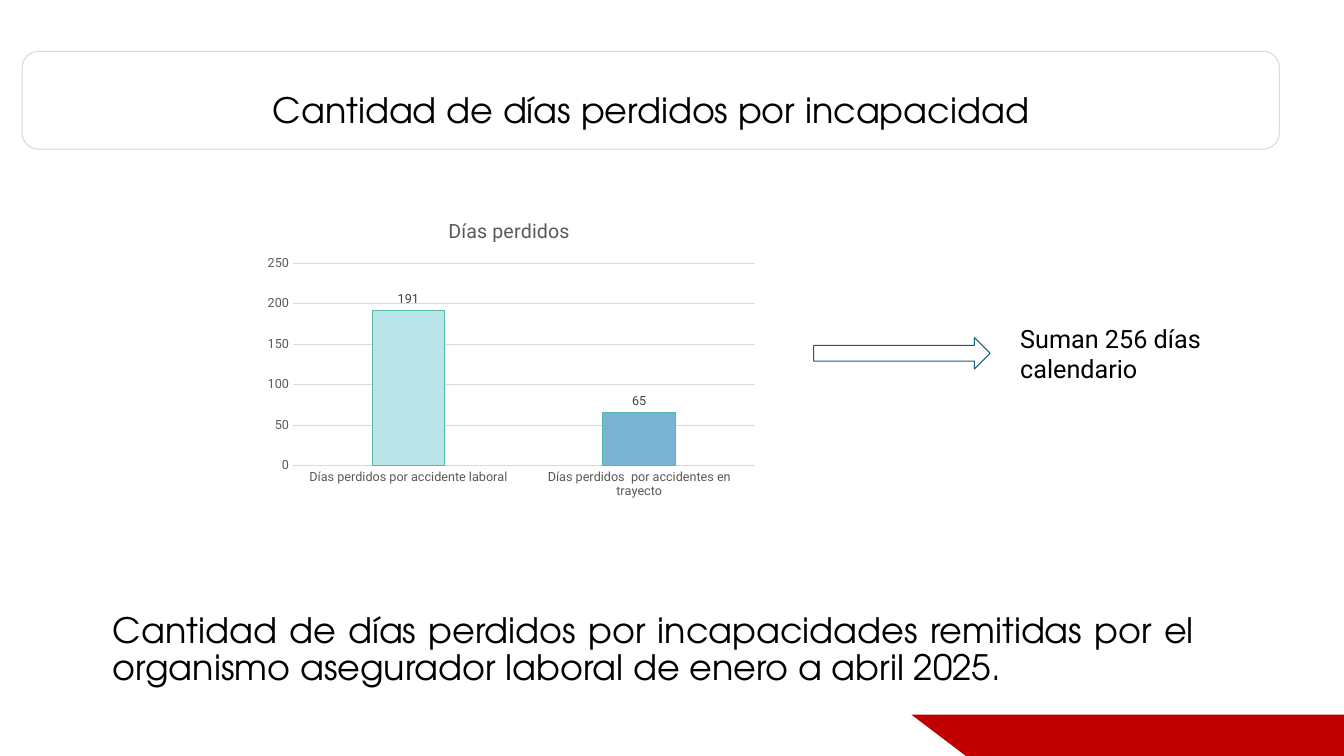
"""Build the slide on days lost to work incapacity."""
from lxml.etree import SubElement
from pptx import Presentation
from pptx.chart.data import CategoryChartData
from pptx.dml.color import RGBColor
from pptx.enum.chart import XL_CHART_TYPE as CT, XL_LABEL_POSITION as LP, XL_TICK_MARK as TM
from pptx.enum.shapes import MSO_SHAPE as SHAPE
from pptx.enum.text import MSO_ANCHOR as ANCHOR, PP_ALIGN as ALIGN
from pptx.oxml.ns import qn
from pptx.util import Inches, Pt

TITLE = "Cantidad de días perdidos por incapacidad"
SUMMARY = ("Cantidad de días perdidos por incapacidades remitidas por el "
           "organismo asegurador laboral de enero a abril 2025.")
TOTAL = "Suman 256 días calendario"
CHART_TITLE = "Días perdidos"
DAYS = {"Días perdidos por accidente laboral": 191,
        "Días perdidos  por accidentes en trayecto": 65}
BAR_COLORS = ["aqua", "blue"]
COLORS = {"black": "000000", "red": "C00000", "navy": "156082", "grid": "D9D9D9",
          "axis": "595959", "label": "404040", "aqua": "B9E5E8", "blue": "7AB2D3",
          "teal": "52BAA7"}
HEADING, BODY = "TeX Gyre Adventor", "Roboto"
W, H = 13.33, 7.5
BOXES = {"title": (0.22, 0.51, 12.47, 0.97), "chart": (2.55, 2.01, 5, 3),
         "arrow": (8.07, 3.35, 1.75, 0.31), "total": (10.02, 3.16, 2.45, 0.71),
         "summary": (1.02, 6.03, 10.92, 1.05)}
BAND = [(W, 7.09), (9.04, 7.09), (9.58, H), (W, H)]
PLOT = {"x": 0.071, "y": 0.2, "w": 0.916, "h": 0.67}


def rgb(name):
    return RGBColor.from_string(COLORS[name])


def box(name):
    return [Inches(v) for v in BOXES[name]]


def set_font(font, size, color="black", name=BODY):
    font.size, font.name, font.bold = Pt(size), name, False
    font.color.rgb = rgb(color)


def set_line(line, color):
    line.color.rgb = rgb(color)
    line.width = Pt(0.75)


def write(shape, text, size, name, align, spacing=None):
    tf = shape.text_frame
    tf.word_wrap = True
    tf.text = text
    p = tf.paragraphs[0]
    p.alignment, p.line_spacing = align, spacing
    set_font(p.runs[0].font, size, name=name)
    return tf


def add_outline(s, kind, name, color):
    sp = s.shapes.add_shape(kind, *box(name))
    sp.shadow.inherit = False
    sp.fill.background()
    set_line(sp.line, color)
    return sp


def add_band(s):
    points = [(Inches(x), Inches(y)) for x, y in BAND]
    builder = s.shapes.build_freeform(*points[0])
    builder.add_line_segments(points[1:], close=True)
    sp = builder.convert_to_shape()
    sp.shadow.inherit = False
    sp.fill.solid()
    sp.fill.fore_color.rgb = rgb("red")
    sp.line.fill.background()


def place_plot(chart):
    area = chart.element.find(".//" + qn("c:plotArea"))
    layout = area.find(qn("c:layout"))
    if layout is None:
        layout = SubElement(area, qn("c:layout"))
        area.insert(0, layout)
    manual = SubElement(layout, qn("c:manualLayout"))
    settings = {"layoutTarget": "inner", "xMode": "edge", "yMode": "edge", **PLOT}
    for tag, value in settings.items():
        SubElement(manual, qn("c:" + tag)).set("val", str(value))


def add_days_chart(s):
    data = CategoryChartData()
    data.categories = list(DAYS)
    data.add_series("Series 1", list(DAYS.values()))
    chart = s.shapes.add_chart(CT.COLUMN_CLUSTERED, *box("chart"), data).chart
    set_font(chart.font, 10)
    chart.has_legend = False
    chart.has_title = True
    tf = chart.chart_title.text_frame
    tf.text = CHART_TITLE
    set_font(tf.paragraphs[0].runs[0].font, 14, "axis")
    chart.chart_title.include_in_layout = False
    place_plot(chart)

    cat, val = chart.category_axis, chart.value_axis
    for axis in (cat, val):
        axis.major_tick_mark = axis.minor_tick_mark = TM.NONE
        set_font(axis.tick_labels.font, 9, "axis")
    set_line(cat.format.line, "grid")
    val.format.line.fill.background()
    set_line(val.major_gridlines.format.line, "grid")
    val.minimum_scale, val.maximum_scale, val.major_unit = 0, 250, 50

    plot = chart.plots[0]
    plot.gap_width, plot.overlap, plot.vary_by_categories = 219, -27, False
    series = plot.series[0]
    for i, color in enumerate(BAR_COLORS):
        bar = series.points[i].format
        bar.fill.solid()
        bar.fill.fore_color.rgb = rgb(color)
        set_line(bar.line, "teal")
    labels = series.data_labels
    labels.show_value, labels.position = True, LP.OUTSIDE_END
    set_font(labels.font, 9, "label")


def main():
    prs = Presentation()
    prs.slide_width, prs.slide_height = Inches(W), Inches(H)
    s = prs.slides.add_slide(prs.slide_layouts[6])
    add_band(s)
    write(s.shapes.add_textbox(*box("summary")), SUMMARY, 25, HEADING, ALIGN.JUSTIFY, 0.9)
    add_outline(s, SHAPE.RIGHT_ARROW, "arrow", "navy")
    write(s.shapes.add_textbox(*box("total")), TOTAL, 18, BODY, ALIGN.LEFT)
    title = add_outline(s, SHAPE.ROUNDED_RECTANGLE, "title", "grid")
    tf = write(title, TITLE, 25, HEADING, ALIGN.CENTER, 0.9)
    tf.vertical_anchor = ANCHOR.BOTTOM
    tf.margin_left = tf.margin_right = tf.margin_top = tf.margin_bottom = Inches(0.13)
    add_days_chart(s)
    prs.save("out.pptx")


if __name__ == "__main__":
    main()
